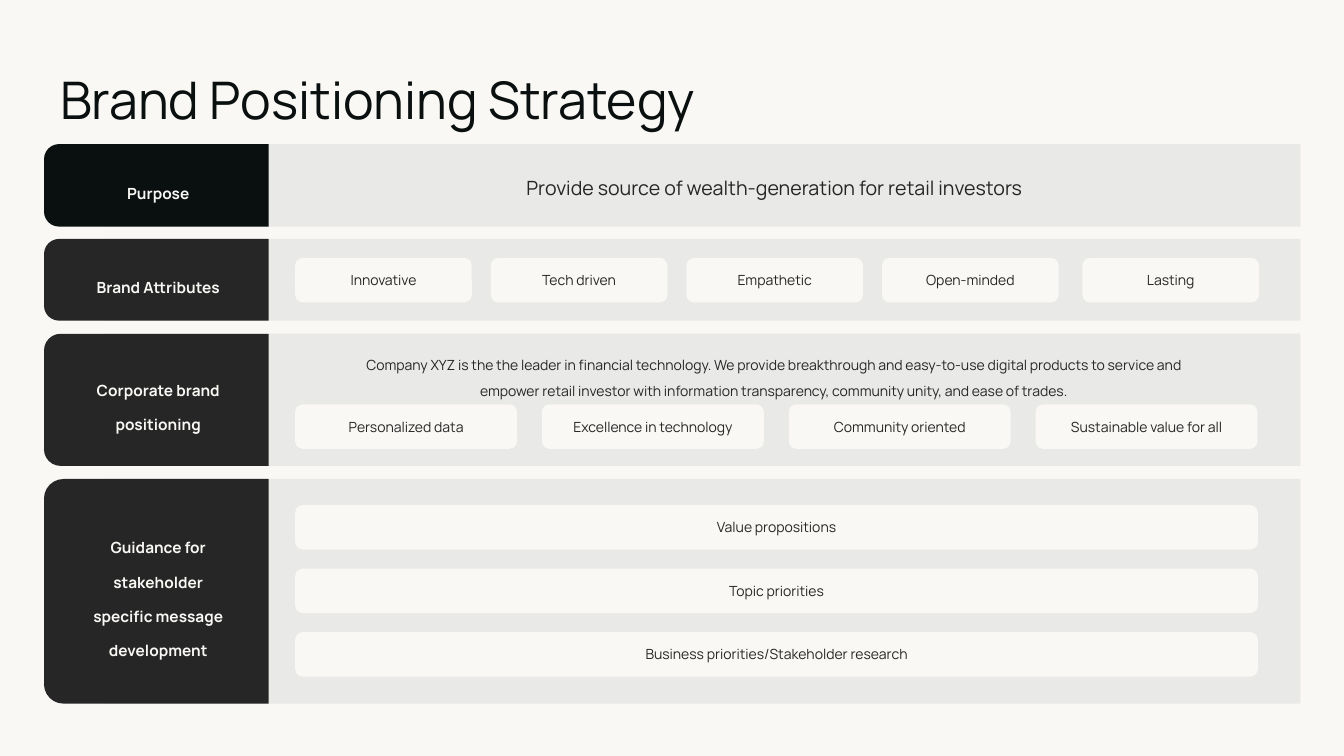
from lxml.etree import SubElement
from pptx import Presentation
from pptx.dml.color import RGBColor
from pptx.enum.shapes import MSO_SHAPE
from pptx.enum.text import MSO_ANCHOR, PP_ALIGN
from pptx.oxml.ns import qn
from pptx.util import Cm, Pt

COLORS = {
    "paper": "F9F8F5",
    "charcoal": "262626",
    "ink": "09100F",
    "slate": "525664",
}
FONT = "Manrope"
BAND_LEFT, BAND_WIDTH = 2.62, 30.15
TAB_LEFT, TAB_WIDTH = 1.11, 5.66
CHIP_LEFT, CHIP_HEIGHT = 7.44, 1.12

ROWS = [
    (3.63, 2.08, 0.38, "ink", ["Purpose"]),
    (6.02, 2.06, 0.38, "charcoal", ["Brand Attributes"]),
    (8.41, 3.33, 0.42, "charcoal", ["Corporate brand", "positioning"]),
    (12.07, 5.66, 0.49, "charcoal",
     ["Guidance for", "stakeholder", "specific message", "development"]),
]
ATTRIBUTES = ["Innovative", "Tech driven", "Empathetic", "Open-minded", "Lasting"]
ATTRIBUTE_LEFTS = [CHIP_LEFT + 4.93 * index for index in range(4)] + [27.28]
POSITIONS = ["Personalized data", "Excellence in technology",
             "Community oriented", "Sustainable value for all"]
MESSAGES = ["Value propositions", "Topic priorities",
            "Business priorities/Stakeholder research"]
PURPOSE = "Provide source of wealth-generation for retail investors"
STATEMENT = (
    "Company XYZ is the the leader in financial technology. We provide "
    "breakthrough and easy-to-use digital products to service and empower "
    "retail investor with information transparency, community unity, and "
    "ease of trades."
)


def color(name):
    return RGBColor.from_string(COLORS[name])


def add_panel(page, kind, left, top, width, height, fill):
    panel = page.shapes.add_shape(kind, Cm(left), Cm(top), Cm(width), Cm(height))
    panel.shadow.inherit = False
    panel.fill.solid()
    panel.fill.fore_color.rgb = color(fill)
    panel.line.fill.background()
    return panel


def write(box, lines, size, tint, bold=False, spacing=1.0,
          align=PP_ALIGN.CENTER, anchor=MSO_ANCHOR.MIDDLE):
    frame = box.text_frame
    frame.word_wrap = True
    frame.vertical_anchor = anchor
    for index, line in enumerate(lines):
        para = frame.add_paragraph() if index else frame.paragraphs[0]
        para.alignment = align
        para.line_spacing = spacing
        span = para.add_run()
        span.text = line
        span.font.name = FONT
        span.font.size = Pt(size)
        span.font.bold = bold
        span.font.color.rgb = color(tint)


def add_text(page, left, top, width, height, text, size, tint, **style):
    box = page.shapes.add_textbox(Cm(left), Cm(top), Cm(width), Cm(height))
    frame = box.text_frame
    frame.margin_left = frame.margin_right = Cm(0)
    frame.margin_top = frame.margin_bottom = Cm(0)
    write(box, [text], size, tint, anchor=MSO_ANCHOR.TOP, **style)


def add_band(page, top, height):
    band = add_panel(page, MSO_SHAPE.RECTANGLE, BAND_LEFT, top,
                     BAND_WIDTH, height, "slate")
    tone = band.fill._xPr.find(f".//{qn('a:srgbClr')}")
    SubElement(tone, qn("a:alpha"), val="9000")


def add_tab(page, top, height, radius, fill, lines):
    shift = (TAB_WIDTH - height) / 2
    tab = add_panel(page, MSO_SHAPE.ROUND_2_SAME_RECTANGLE, TAB_LEFT + shift,
                    top - shift, height, TAB_WIDTH, fill)
    tab.rotation = 270
    tab.adjustments[0] = radius / min(height, TAB_WIDTH)
    tab.adjustments[1] = 0
    label = page.shapes.add_textbox(Cm(1.22), Cm(top), Cm(5.54), Cm(height))
    write(label, lines, 11, "paper", bold=True, spacing=1.85)


def add_chip(page, left, top, width, text):
    chip = add_panel(page, MSO_SHAPE.ROUNDED_RECTANGLE, left, top,
                     width, CHIP_HEIGHT, "paper")
    chip.adjustments[0] = 0.167
    write(chip, [text], 10, "charcoal")


def main():
    deck = Presentation()
    deck.slide_width, deck.slide_height = Cm(33.87), Cm(19.05)
    page = deck.slides.add_slide(deck.slide_layouts[6])
    page.background.fill.solid()
    page.background.fill.fore_color.rgb = color("paper")

    add_text(page, 1.52, 1.7, 31.24, 1.73, "Brand Positioning Strategy",
             37, "ink", align=PP_ALIGN.LEFT)
    for top, height, radius, fill, lines in ROWS:
        add_band(page, top, height)
        add_tab(page, top, height, radius, fill, lines)

    add_text(page, 11.61, 4.37, 15.82, 0.58, PURPOSE, 14, "charcoal", spacing=1.11)
    add_text(page, 8.94, 8.74, 21.11, 1.09, STATEMENT, 10, "charcoal", spacing=1.56)

    for left, text in zip(ATTRIBUTE_LEFTS, ATTRIBUTES):
        add_chip(page, left, 6.5, 4.45, text)
    for index, text in enumerate(POSITIONS):
        add_chip(page, CHIP_LEFT + 6.22 * index, 10.19, 5.59, text)
    for index, text in enumerate(MESSAGES):
        add_chip(page, CHIP_LEFT, 12.73 + 1.6 * index, 24.26, text)

    deck.save("out.pptx")


if __name__ == "__main__":
    main()
